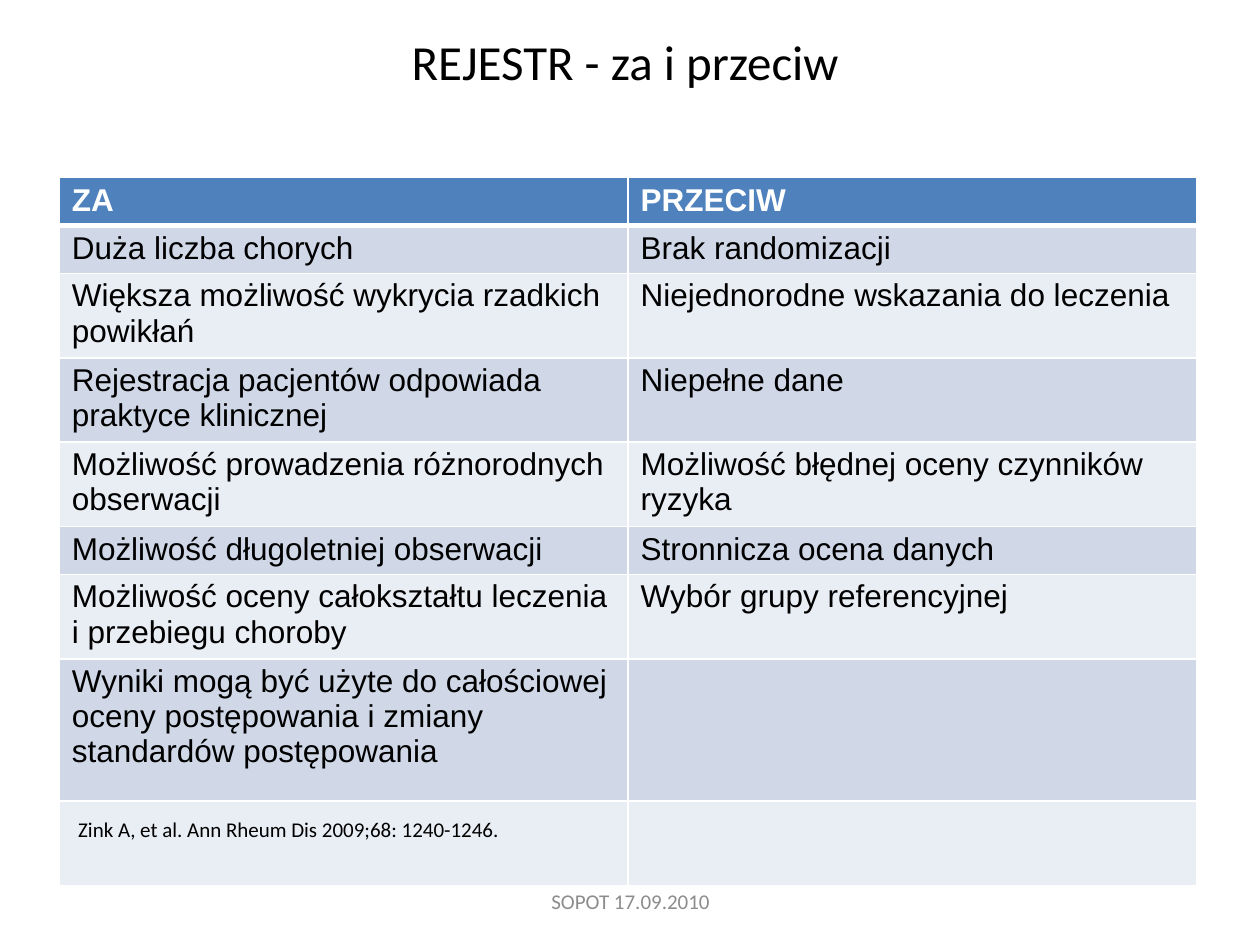
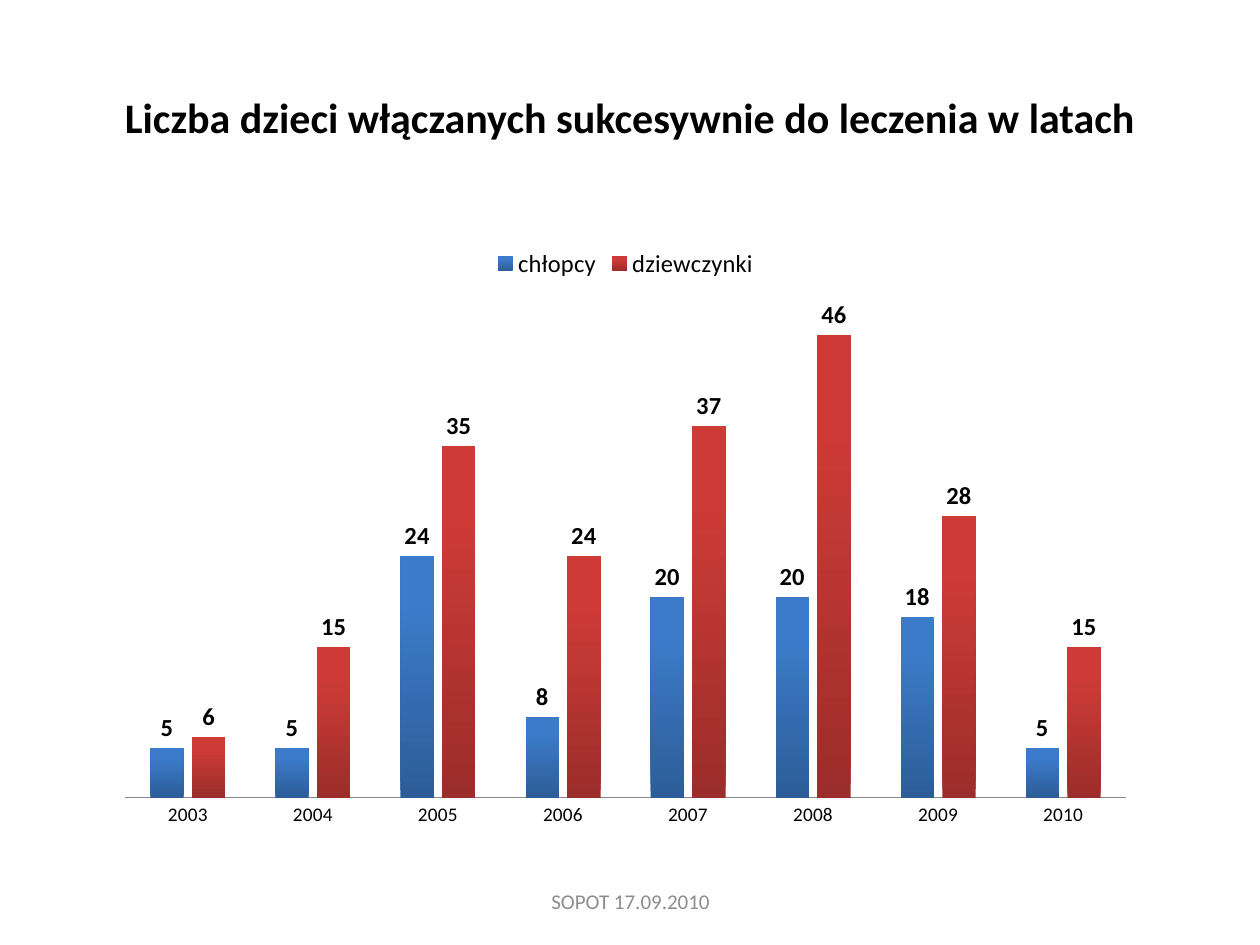
import pptx
import pptx.util
import pptx.chart.data
import pptx.dml.color
import pptx.enum.chart
import pptx.enum.text
import pptx.oxml
import pptx.oxml.ns
from pptx.util import Inches, Pt

# Content
FOOTER = "SOPOT 17.09.2010"
TABLE_TITLE = "REJESTR - za i przeciw"
CHART_TITLE = "Liczba dzieci włączanych sukcesywnie do leczenia w latach"
ARGUMENTS = [  # for, against, row height
    ("ZA", "PRZECIW", 0.38),
    ("Duża liczba chorych", "Brak randomizacji", 0.38),
    ("Większa możliwość wykrycia rzadkich powikłań",
     "Niejednorodne wskazania do leczenia", 0.67),
    ("Rejestracja pacjentów odpowiada praktyce klinicznej", "Niepełne dane", 0.67),
    ("Możliwość prowadzenia różnorodnych obserwacji",
     "Możliwość błędnej oceny czynników ryzyka", 0.67),
    ("Możliwość długoletniej obserwacji", "Stronnicza ocena danych", 0.38),
    ("Możliwość oceny całokształtu leczenia i przebiegu choroby",
     "Wybór grupy referencyjnej", 0.67),
    ("Wyniki mogą być użyte do całościowej oceny postępowania "
     "i zmiany standardów postępowania", "", 1.13),
    ("Zink A, et al. Ann Rheum Dis 2009;68: 1240-1246.", "", 0.67),
]
YEARS = [str(year) for year in range(2003, 2011)]
CHILDREN = {  # series: values, bottom colour, top colour
    "chłopcy": ([5, 5, 24, 8, 20, 20, 18, 5], "boys_dark", "boys"),
    "dziewczynki": ([6, 15, 35, 24, 37, 46, 28, 15], "girls_dark", "girls"),
}

# Shared look
COLORS = {
    "text": "000000", "white": "FFFFFF", "footer": "8C8C8C", "axis": "868686",
    "header": "4F81BD", "band_dark": "D0D8E8", "band_light": "E9EDF4",
    "boys": "3C7BC9", "boys_dark": "2C5D98",
    "girls": "CE3B37", "girls_dark": "9B2D2A",
}
TITLE_BOX = (0.5, 0.3, 9, 1.25)
HIGH_TITLE_BOX = (0.46, 0.2, 9, 0.57)


def rgb(name):
    return pptx.dml.color.RGBColor.from_string(COLORS[name])


def set_font(font, size, color="text", bold=False, name="Calibri"):
    font.name, font.size, font.bold = name, Pt(size), bold
    font.color.rgb = rgb(color)


def add_text(s, text, box, size, color="text", bold=False):
    tf = s.shapes.add_textbox(*map(Inches, box)).text_frame
    tf.word_wrap = True
    tf.vertical_anchor = pptx.enum.text.MSO_ANCHOR.MIDDLE
    p = tf.paragraphs[0]
    p.text = text
    p.alignment = pptx.enum.text.PP_ALIGN.CENTER
    set_font(p.font, size, color, bold)


def add_slide(prs, title, size, bold=False, box=TITLE_BOX):
    s = prs.slides.add_slide(prs.slide_layouts[6])
    add_text(s, title, box, size, bold=bold)
    return s


def add_footer(s):
    add_text(s, FOOTER, (3.42, 6.95, 3.17, 0.4), 12, "footer")


def set_borders(cell, bottom):
    tcPr = cell._tc.get_or_add_tcPr()
    widths = {"lnL": 1, "lnR": 1, "lnT": 1, "lnB": bottom}
    for i, (tag, width) in enumerate(widths.items()):
        tcPr.insert(i, pptx.oxml.parse_xml(
            f'<a:{tag} {pptx.oxml.ns.nsdecls("a")} w="{Pt(width)}"><a:solidFill>'
            f'<a:srgbClr val="{COLORS["white"]}"/></a:solidFill></a:{tag}>'))


def add_arguments(s):
    heights = [row[2] for row in ARGUMENTS]
    table = s.shapes.add_table(len(ARGUMENTS), 2, Inches(0.47), Inches(1.41),
                               Inches(9.03), Inches(sum(heights))).table
    for col in table.columns:
        col.width = Inches(4.515)
    last = len(ARGUMENTS) - 1
    for i, (*texts, height) in enumerate(ARGUMENTS):
        table.rows[i].height = Inches(height)
        header = i == 0
        fill = "header" if header else ("band_light", "band_dark")[i % 2]
        for j, text in enumerate(texts):
            cell = table.cell(i, j)
            cell.fill.solid()
            cell.fill.fore_color.rgb = rgb(fill)
            set_borders(cell, 3 if header else 1)
            # A slim bottom margin keeps two lines within the row height
            cell.margin_top, cell.margin_bottom = Inches(0.04), Inches(0.01)
            p = cell.text_frame.paragraphs[0]
            p.text = text
            if i == last:  # source reference
                set_font(p.font, 12)
                cell.margin_left, cell.margin_top = Inches(0.15), Inches(0.13)
            else:
                set_font(p.font, 18, "white" if header else "text", header, "Arial")


def set_plot_area(chart, x, y, w, h):
    layout = "".join(f'<c:{tag} val="{val}"/>' for tag, val in (
        ("xMode", "edge"), ("yMode", "edge"), ("x", x), ("y", y), ("w", w), ("h", h)))
    area = chart._chartSpace.chart.plotArea
    for old in area.findall(pptx.oxml.ns.qn("c:layout")):
        area.remove(old)
    area.insert(0, pptx.oxml.parse_xml(
        f'<c:layout {pptx.oxml.ns.nsdecls("c")}><c:manualLayout>'
        f'<c:layoutTarget val="inner"/>{layout}</c:manualLayout></c:layout>'))


def add_children_chart(s):
    data = pptx.chart.data.CategoryChartData()
    data.categories = YEARS
    for name, (values, _, _) in CHILDREN.items():
        data.add_series(name, values)
    chart = s.shapes.add_chart(
        pptx.enum.chart.XL_CHART_TYPE.COLUMN_CLUSTERED, Inches(0.83), Inches(1.86),
        Inches(8.27), Inches(4.81), data).chart
    set_font(chart.font, 11)
    chart.has_title = False
    chart.has_legend = True
    chart.legend.position = pptx.enum.chart.XL_LEGEND_POSITION.TOP
    chart.legend.include_in_layout = False
    set_font(chart.legend.font, 14)
    set_plot_area(chart, 0.02, 0.1, 0.96, 0.83)

    # Axes
    values_axis, years_axis = chart.value_axis, chart.category_axis
    values_axis.visible = False
    values_axis.has_major_gridlines = False
    values_axis.minimum_scale, values_axis.maximum_scale = 0, 50
    years_axis.major_tick_mark = pptx.enum.chart.XL_TICK_MARK.NONE
    years_axis.format.line.color.rgb = rgb("axis")

    # Columns
    plot = chart.plots[0]
    plot.gap_width, plot.overlap = 150, -25
    plot.vary_by_categories = False
    for series, (_, bottom, top) in zip(plot.series, CHILDREN.values()):
        fill = series.format.fill
        fill.gradient()
        fill.gradient_angle = 90
        for stop, color, position in zip(fill.gradient_stops, (bottom, top), (0, 0.8)):
            stop.color.rgb = rgb(color)
            stop.position = position
        labels = series.data_labels
        labels.show_value = True
        labels.position = pptx.enum.chart.XL_LABEL_POSITION.OUTSIDE_END
        set_font(labels.font, 14, bold=True)


def main():
    prs = pptx.Presentation()
    prs.slide_width, prs.slide_height = Inches(10), Inches(7.5)

    # Arguments for and against
    s = add_slide(prs, TABLE_TITLE, 28, box=HIGH_TITLE_BOX)
    add_arguments(s)
    add_footer(s)

    # Children per year
    s = add_slide(prs, CHART_TITLE, 24, bold=True)
    add_children_chart(s)
    add_footer(s)

    prs.save("out.pptx")


if __name__ == "__main__":
    main()
